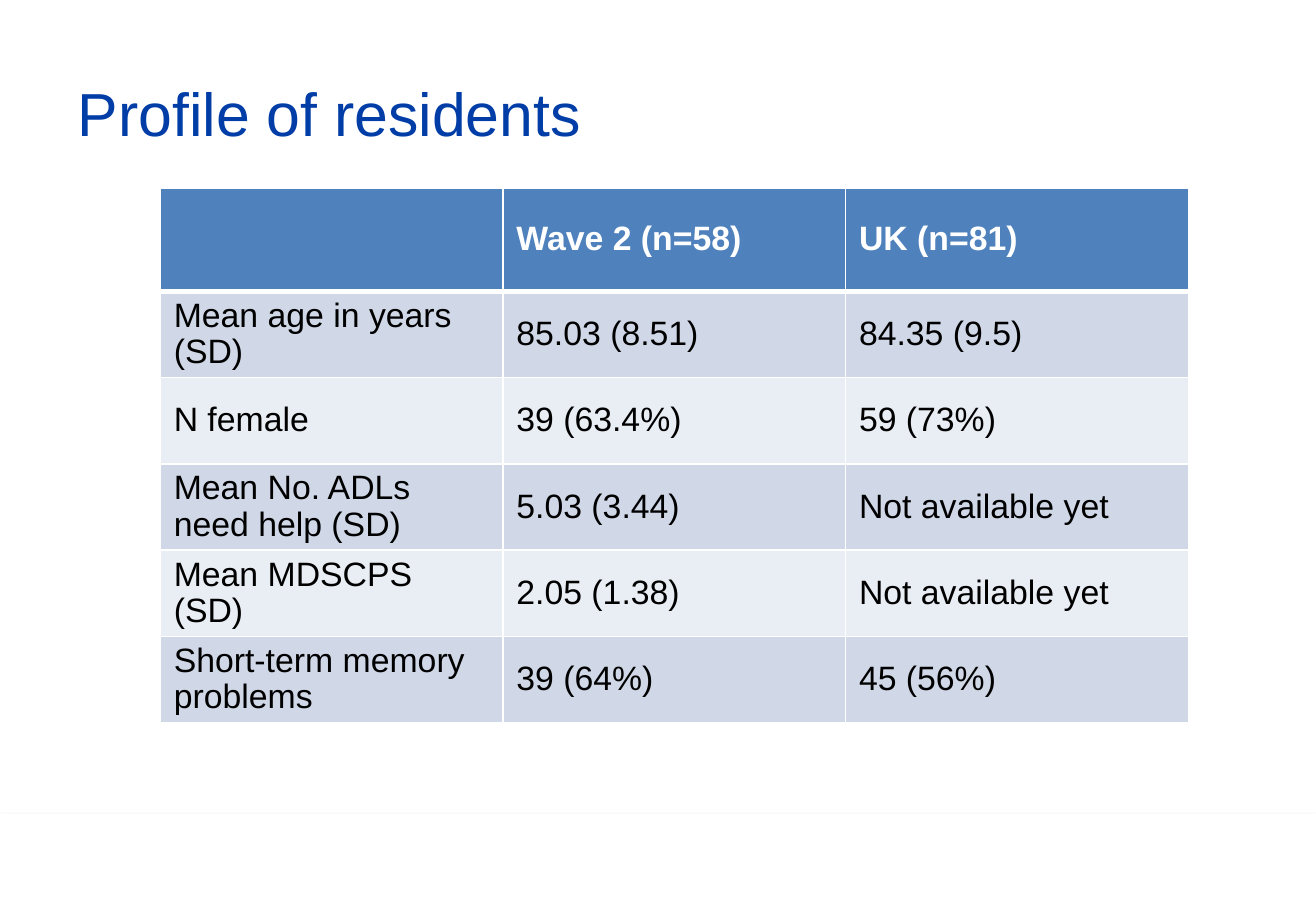
from dataclasses import dataclass

from lxml import etree
from pptx import Presentation
from pptx.dml.color import RGBColor
from pptx.enum.shapes import MSO_SHAPE
from pptx.enum.text import MSO_ANCHOR, PP_ALIGN
from pptx.oxml.ns import qn
from pptx.slide import Slide
from pptx.table import _Cell
from pptx.text.text import _Paragraph
from pptx.util import Inches, Pt

RECTANGLE = MSO_SHAPE.RECTANGLE
MIDDLE = MSO_ANCHOR.MIDDLE
LEFT = PP_ALIGN.LEFT

FONT = "Arial"
COLORS = {
    "title": "003DA6",
    "header": "4F81BD",
    "odd": "D0D8E8",
    "even": "E9EDF4",
    "white": "FFFFFF",
    "black": "000000",
}
COLUMN_WIDTH = 2.82
HEADER_HEIGHT = 0.85
BODY_HEIGHT = 0.71


@dataclass(frozen=True)
class ProfileRow:
    measure: str
    wave_2: str
    uk: str


@dataclass(frozen=True)
class RowStyle:
    height: float
    fill: str
    color: str
    bold: bool
    bottom_border: float


HEADING = ProfileRow("", "Wave 2 (n=58)", "UK (n=81)")
MEASURES = [
    ProfileRow("Mean age in years (SD)", "85.03 (8.51)", "84.35 (9.5)"),
    ProfileRow("N female", "39 (63.4%)", "59 (73%)"),
    ProfileRow("Mean No. ADLs need help (SD)", "5.03 (3.44)", "Not available yet"),
    ProfileRow("Mean MDSCPS (SD)", "2.05 (1.38)", "Not available yet"),
    ProfileRow("Short-term memory problems", "39 (64%)", "45 (56%)"),
]
HEADER_STYLE = RowStyle(HEADER_HEIGHT, "header", "white", True, 3)
BODY_STYLES = [
    RowStyle(BODY_HEIGHT, band, "black", False, 1) for band in ("odd", "even")
]


def rgb(name: str) -> RGBColor:
    return RGBColor.from_string(COLORS[name])


def add_text(
    paragraph: _Paragraph, text: str, size: float, color: str, bold: bool = False
) -> None:
    paragraph.alignment = LEFT
    run = paragraph.add_run()
    run.text = text
    run.font.name = FONT
    run.font.size = Pt(size)
    run.font.bold = bold
    run.font.color.rgb = rgb(color)


def add_solid_color(parent: etree._Element, color: str) -> etree._Element:
    solid = etree.SubElement(parent, qn("a:solidFill"))
    return etree.SubElement(solid, qn("a:srgbClr"), val=COLORS[color])


def set_borders(cell: _Cell, top: float, bottom: float) -> None:
    properties = cell._tc.get_or_add_tcPr()
    widths = {"a:lnL": 1, "a:lnR": 1, "a:lnT": top, "a:lnB": bottom}
    for side, width in widths.items():
        border = etree.SubElement(properties, qn(side), w=str(Pt(width)))
        add_solid_color(border, "white")


def format_cell(cell: _Cell, text: str, style: RowStyle, top_border: float) -> None:
    set_borders(cell, top_border, style.bottom_border)
    cell.fill.solid()
    cell.fill.fore_color.rgb = rgb(style.fill)
    cell.vertical_anchor = MIDDLE
    cell.margin_left = cell.margin_right = Inches(0.11)
    cell.margin_top = cell.margin_bottom = Inches(0.05)
    if text:
        paragraph = cell.text_frame.paragraphs[0]
        paragraph.line_spacing = 0.97
        add_text(paragraph, text, 20, style.color, style.bold)


def add_footer_band(slide: Slide) -> None:
    band = slide.shapes.add_shape(
        RECTANGLE, Inches(0), Inches(6.7), Inches(10.83), Inches(0.8)
    )
    band.fill.solid()
    band.fill.fore_color.rgb = rgb("white")
    band.line.fill.background()
    band.shadow.inherit = False
    effects = band._element.spPr.find(qn("a:effectLst"))
    shadow = etree.SubElement(
        effects,
        qn("a:outerShdw"),
        blurRad=str(Pt(3.1)),
        dist=str(Pt(1.8)),
        dir="5400000",
        rotWithShape="0",
    )
    tint = etree.SubElement(shadow, qn("a:srgbClr"), val=COLORS["black"])
    etree.SubElement(tint, qn("a:alpha"), val="35000")


def add_title(slide: Slide) -> None:
    title = slide.shapes.title
    title.left, title.top = Inches(0.54), Inches(0.3)
    title.width, title.height = Inches(9.75), Inches(1.25)
    title.text_frame.vertical_anchor = MIDDLE
    add_text(title.text_frame.paragraphs[0], "Profile of residents", 36, "title")


def add_profile_table(slide: Slide) -> None:
    styles = [HEADER_STYLE] + [BODY_STYLES[i % 2] for i in range(len(MEASURES))]
    profile = slide.shapes.add_table(
        len(styles),
        3,
        Inches(1.32),
        Inches(1.55),
        Inches(3 * COLUMN_WIDTH),
        Inches(sum(style.height for style in styles)),
    ).table
    for column in profile.columns:
        column.width = Inches(COLUMN_WIDTH)
    top_border = 1
    for index, (entry, style) in enumerate(zip([HEADING] + MEASURES, styles)):
        profile.rows[index].height = Inches(style.height)
        for column, text in enumerate((entry.measure, entry.wave_2, entry.uk)):
            format_cell(profile.cell(index, column), text, style, top_border)
        top_border = style.bottom_border


def main() -> None:
    presentation = Presentation()
    presentation.slide_width = Inches(10.83)
    presentation.slide_height = Inches(7.5)
    slide = presentation.slides.add_slide(presentation.slide_layouts[5])
    add_footer_band(slide)
    add_title(slide)
    add_profile_table(slide)
    presentation.save("out.pptx")


if __name__ == "__main__":
    main()
